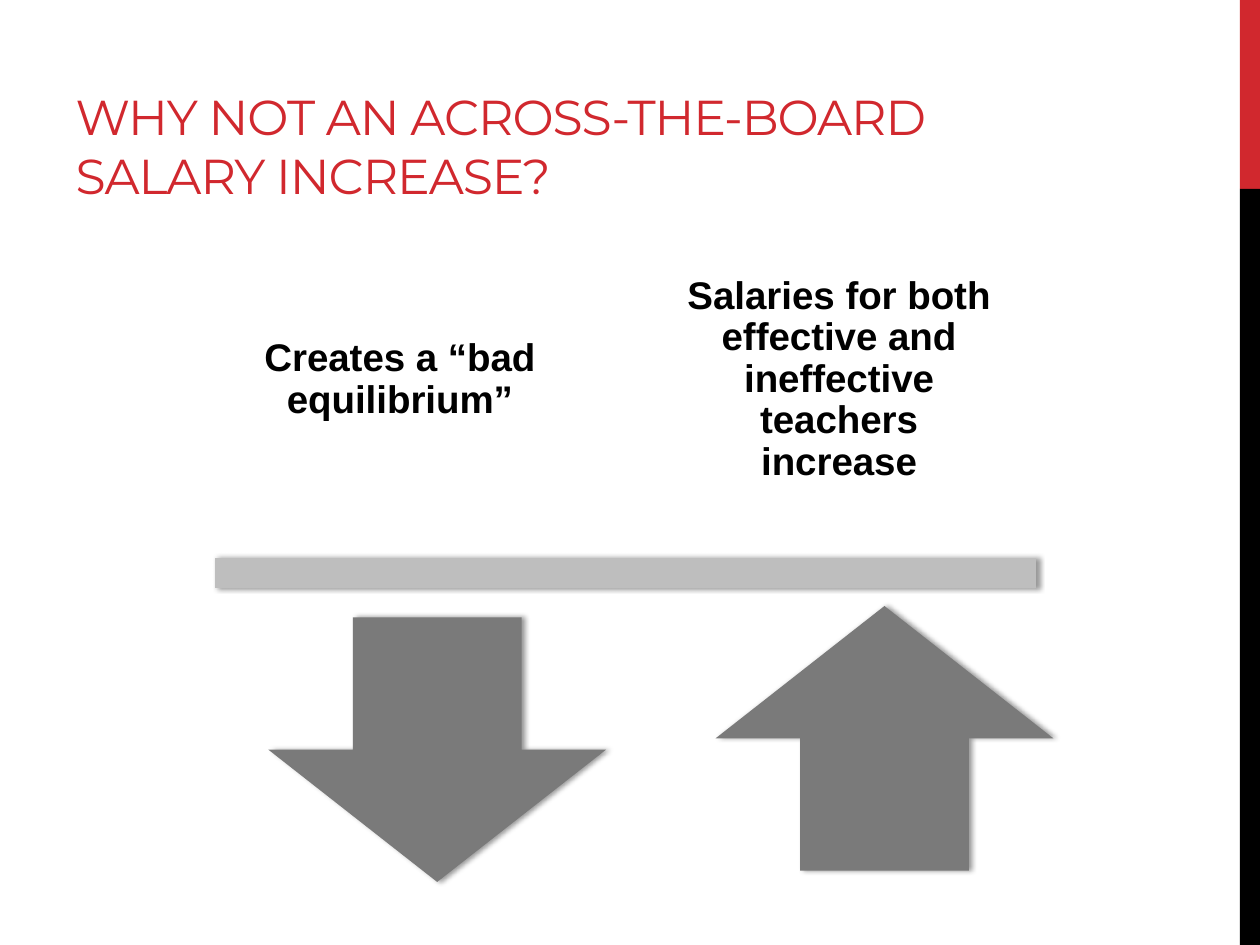
from dataclasses import dataclass

from lxml.etree import SubElement
from pptx import Presentation
from pptx.dml.color import RGBColor
from pptx.enum.shapes import MSO_SHAPE as Shape
from pptx.enum.text import MSO_ANCHOR as Anchor, PP_ALIGN as Align
from pptx.oxml.ns import qn
from pptx.util import Inches, Pt


@dataclass(frozen=True)
class Theme:
    red: RGBColor = RGBColor(0xD1, 0x28, 0x2E)
    black: RGBColor = RGBColor(0, 0, 0)
    bar: RGBColor = RGBColor(0xBE, 0xBE, 0xBE)
    arrow: RGBColor = RGBColor(0x7A, 0x7A, 0x7A)
    title_font: str = "Montserrat"
    body_font: str = "Arial"
    title_size: Pt = Pt(28)
    body_size: Pt = Pt(22)


THEME = Theme()


def box(left, top, width, height):
    return Inches(left), Inches(top), Inches(width), Inches(height)


def set_font(font, name, size, color, bold=False):
    font.name, font.size, font.bold = name, size, bold
    font.color.rgb = color


def add_title(slide, text):
    title = slide.shapes.title
    title.left, title.top, title.width, title.height = box(0.5, 0.17, 8.33, 1.5)
    frame = title.text_frame
    frame.text = text
    frame.word_wrap = True
    frame.vertical_anchor = Anchor.BOTTOM
    paragraph = frame.paragraphs[0]
    paragraph.alignment = Align.LEFT
    set_font(paragraph.font, THEME.title_font, THEME.title_size, THEME.red)
    paragraph.runs[0].font._element.set("spc", "-60")


def add_filled(slide, kind, bounds, color):
    shape = slide.shapes.add_shape(kind, *box(*bounds))
    shape.shadow.inherit = False
    shape.fill.solid()
    shape.fill.fore_color.rgb = color
    shape.line.fill.background()
    return shape


def add_shadow(shape):
    """Cast a soft black shadow to the right."""
    effects = shape._element.spPr.find(qn("a:effectLst"))
    shadow = SubElement(effects, qn("a:outerShdw"), blurRad=str(Pt(3.1)),
                        dist=str(Pt(1.8)), dir="0", rotWithShape="0")
    color = SubElement(shadow, qn("a:srgbClr"), val=str(THEME.black))
    SubElement(color, qn("a:alpha"), val="40000")


def add_label(slide, text, left, width):
    frame = slide.shapes.add_textbox(*box(left, 1.99, width, 2.05)).text_frame
    frame.word_wrap = True
    frame.vertical_anchor = Anchor.MIDDLE
    frame.margin_left = frame.margin_right = Inches(0.17)
    frame.margin_top = frame.margin_bottom = Inches(0.17)
    frame.text = text
    paragraph = frame.paragraphs[0]
    paragraph.alignment = Align.CENTER
    paragraph.line_spacing = 0.9
    set_font(paragraph.font, THEME.body_font, THEME.body_size, THEME.black, bold=True)


def main():
    presentation = Presentation()
    presentation.slide_width, presentation.slide_height = Inches(10), Inches(7.5)
    slide = presentation.slides.add_slide(presentation.slide_layouts[5])

    add_filled(slide, Shape.RECTANGLE, (9.84, 0, 0.16, 1.5), THEME.red)
    add_filled(slide, Shape.RECTANGLE, (9.84, 1.5, 0.16, 6), THEME.black)
    add_title(slide, "WHY NOT AN ACROSS-THE-BOARD SALARY INCREASE?")

    for kind, bounds, color in (
        (Shape.MATH_MINUS, (0.53, 4.04, 8.87, 1.02), THEME.bar),
        (Shape.DOWN_ARROW, (2.13, 4.9, 2.68, 2.1), THEME.arrow),
        (Shape.UP_ARROW, (5.68, 4.81, 2.68, 2.1), THEME.arrow),
    ):
        add_shadow(add_filled(slide, kind, bounds, color))

    add_label(slide, "Creates a “bad equilibrium”", 1.61, 3.13)
    add_label(slide, "Salaries for both effective and ineffective teachers increase",
              5.23, 2.86)

    presentation.save("out.pptx")


if __name__ == "__main__":
    main()
